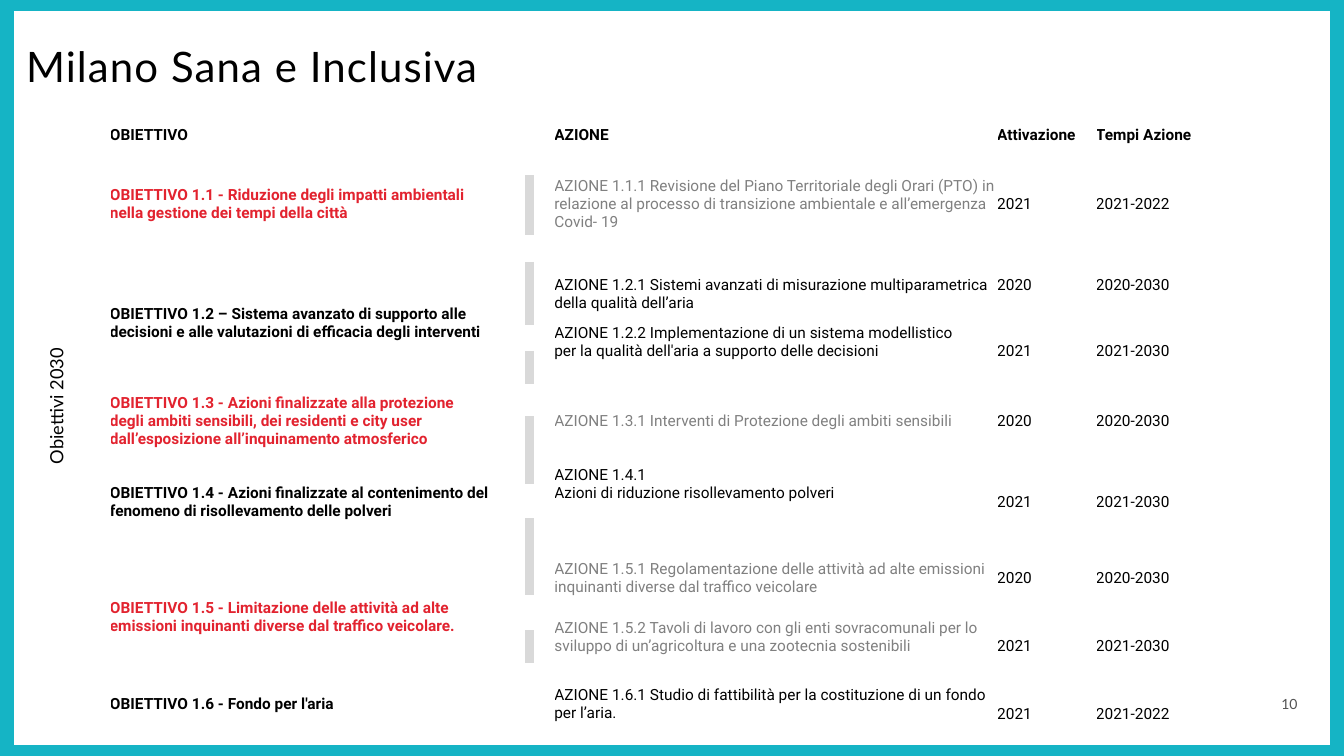
import pptx
import pptx.dml.color
import pptx.enum.shapes
import pptx.enum.text
import pptx.oxml.ns
import pptx.util
from lxml import etree

Cm = pptx.util.Cm
Pt = pptx.util.Pt
RGBColor = pptx.dml.color.RGBColor
ALIGN = pptx.enum.text.PP_ALIGN
ANCHOR = pptx.enum.text.MSO_ANCHOR

BLACK = RGBColor(0x00, 0x00, 0x00)
WHITE = RGBColor(0xFF, 0xFF, 0xFF)
RED = RGBColor(0xE2, 0x23, 0x2F)
GREY = RGBColor(0x80, 0x80, 0x80)
NUMBER_GREY = RGBColor(0x53, 0x53, 0x53)
BAR_GREY = RGBColor(0xD9, 0xD9, 0xD9)
TEAL = RGBColor(0x15, 0xB4, 0xC5)

LINE_HEIGHT = 0.455  # cm, one table line at 11 pt
COLUMN_WIDTHS = [9.75, 1.45, 11.16, 2.49, 3.63]
HEADER_HEIGHT = 0.79
HEADERS = ["OBIETTIVO", "", "AZIONE", "Attivazione", "Tempi Azione"]

# Top and bottom of each bar beside the actions, in cm
BAR_X = 13.34
BARS = [(4.42, 5.92), (6.6, 8.2), (8.84, 9.68), (10.49, 12.19), (13.06, 14.99), (15.88, 16.71)]

# Objective, its colour, its cell margins, the colour of its actions, and the actions:
# text, cell margins, start year, period, row height
OBJECTIVES = [
    ("OBIETTIVO 1.1 - Riduzione degli impatti ambientali nella gestione dei tempi della città",
     RED, {}, GREY, [
         ("AZIONE 1.1.1 Revisione del Piano Territoriale degli Orari (PTO) in relazione al "
          "processo di transizione ambientale e all’emergenza Covid- 19",
          {}, "2021", "2021-2022", 2.69)]),
    ("OBIETTIVO 1.2 – Sistema avanzato di supporto alle decisioni e alle valutazioni di "
     "efficacia degli interventi",
     BLACK, {}, BLACK, [
         ("AZIONE 1.2.1 Sistemi avanzati di misurazione multiparametrica della qualità dell’aria",
          {"top": LINE_HEIGHT}, "2020", "2020-2030", 1.4),
         ("AZIONE 1.2.2 Implementazione di un sistema modellistico\n"
          "per la qualità dell'aria a supporto delle decisioni",
          {"bottom": LINE_HEIGHT}, "2021", "2021-2030", 1.93)]),
    ("OBIETTIVO 1.3 - Azioni finalizzate alla protezione degli ambiti sensibili, dei residenti "
     "e city user dall’esposizione all’inquinamento atmosferico",
     RED, {"right": 0.4}, GREY, [
         ("AZIONE 1.3.1 Interventi di Protezione degli ambiti sensibili",
          {}, "2020", "2020-2030", 1.63)]),
    ("OBIETTIVO 1.4 - Azioni finalizzate al contenimento del fenomeno di risollevamento "
     "delle polveri",
     BLACK, {}, BLACK, [
         ("AZIONE 1.4.1\nAzioni di riduzione risollevamento polveri",
          {"bottom": 2 * LINE_HEIGHT}, "2021", "2021-2030", 2.41)]),
    ("OBIETTIVO 1.5 - Limitazione delle attività ad alte emissioni inquinanti diverse dal "
     "traffico veicolare.",
     RED, {}, GREY, [
         ("AZIONE 1.5.1 Regolamentazione delle attività ad alte emissioni inquinanti diverse "
          "dal traffico veicolare",
          {}, "2020", "2020-2030", 1.45),
         ("AZIONE 1.5.2 Tavoli di lavoro con gli enti sovracomunali per lo sviluppo di "
          "un’agricoltura e una zootecnia sostenibili",
          {"bottom": LINE_HEIGHT}, "2021", "2021-2030", 1.96)]),
    ("OBIETTIVO 1.6 - Fondo per l'aria",
     BLACK, {"bottom": LINE_HEIGHT}, BLACK, [
         ("AZIONE 1.6.1 Studio di fattibilità per la costituzione di un fondo per l’aria.",
          {"bottom": LINE_HEIGHT}, "2021", "2021-2022", 1.45)]),
]


def add_span(para, text, font_name, size, color, bold=False):
    span = para.add_run()
    span.text = text
    span.font.name = font_name
    span.font.size = Pt(size)
    span.font.bold = bold
    span.font.color.rgb = color
    return span


def add_text(page, text, left, top, width, height, size, color,
             align=ALIGN.LEFT, margin=0, wrap=True):
    box = page.shapes.add_textbox(Cm(left), Cm(top), Cm(width), Cm(height))
    frame = box.text_frame
    frame.word_wrap = wrap
    frame.margin_left = frame.margin_right = Cm(margin)
    frame.margin_top = frame.margin_bottom = Cm(margin)
    para = frame.paragraphs[0]
    para.alignment = align
    return box, add_span(para, text, "Lato", size, color)


def add_frame(page):
    border = page.shapes.add_shape(pptx.enum.shapes.MSO_SHAPE.RECTANGLE,
                                   Cm(0.03), Cm(-0.05), Cm(33.83), Cm(19.15))
    border.shadow.inherit = False
    border.fill.background()
    border.line.color.rgb = TEAL
    border.line.width = Pt(19)


def add_bar(page, top, bottom):
    bar = page.shapes.add_connector(pptx.enum.shapes.MSO_CONNECTOR.STRAIGHT,
                                    Cm(BAR_X), Cm(top), Cm(BAR_X), Cm(bottom))
    bar.line.color.rgb = BAR_GREY
    bar.line.width = Pt(6)
    etree.SubElement(bar.element.spPr, pptx.oxml.ns.qn("a:effectLst"))


def write_cell(cell, text, color=BLACK, bold=False, margins=None):
    for position, line in enumerate(text.split("\n")):
        para = cell.text_frame.paragraphs[0]
        if position:
            para.add_line_break()
        add_span(para, line, "Roboto", 11, color, bold)
    for side, length in (margins or {}).items():
        setattr(cell, "margin_" + side, Cm(length))


def add_objectives_table(page):
    heights = [HEADER_HEIGHT] + [action[-1] for *_, actions in OBJECTIVES for action in actions]
    table = page.shapes.add_table(len(heights), len(COLUMN_WIDTHS), Cm(2.77), Cm(3),
                                  Cm(sum(COLUMN_WIDTHS)), Cm(sum(heights))).table
    table.first_row = table.horz_banding = False
    for column, width in zip(table.columns, COLUMN_WIDTHS):
        column.width = Cm(width)
    for row, height in zip(table.rows, heights):
        row.height = Cm(height)
    for cell in table.iter_cells():
        cell.fill.solid()
        cell.fill.fore_color.rgb = WHITE
        cell.vertical_anchor = ANCHOR.MIDDLE
        cell.margin_left = cell.margin_right = cell.margin_top = cell.margin_bottom = 0
        cell.text_frame.paragraphs[0].font.size = Pt(11)

    # Header row
    for index, header in enumerate(HEADERS):
        if header:
            write_cell(table.cell(0, index), header, bold=True)

    # One row per action; an objective spans all its actions
    row = 1
    for objective, color, margins, action_color, actions in OBJECTIVES:
        first = table.cell(row, 0)
        if len(actions) > 1:
            first.merge(table.cell(row + len(actions) - 1, 0))
        write_cell(first, objective, color, True, margins)
        for action, action_margins, start, period, _ in actions:
            write_cell(table.cell(row, 2), action, action_color, margins=action_margins)
            write_cell(table.cell(row, 3), start)
            write_cell(table.cell(row, 4), period)
            row += 1


def main():
    deck = pptx.Presentation()
    deck.slide_width, deck.slide_height = Cm(33.87), Cm(19.05)
    page = deck.slides.add_slide(deck.slide_layouts[6])

    # Frame, page number and side label
    add_frame(page)
    add_text(page, "10", 32.28, 17.53, 0.43, 0.43, 10, NUMBER_GREY, ALIGN.CENTER, wrap=False)
    label, _ = add_text(page, "Obiettivi 2030", -5.13, 9.83, 13.08, 0.81, 13, BLACK,
                        ALIGN.CENTER, margin=0.13)
    label.rotation = 270

    # Table and bars
    add_objectives_table(page)
    for top, bottom in BARS:
        add_bar(page, top, bottom)

    # Title with wider letter spacing
    _, title = add_text(page, "Milano Sana e Inclusiva", 0.66, 1.02, 12.47, 1.27, 30, BLACK)
    title.font._element.set("spc", "80")

    deck.save("out.pptx")


if __name__ == "__main__":
    main()
